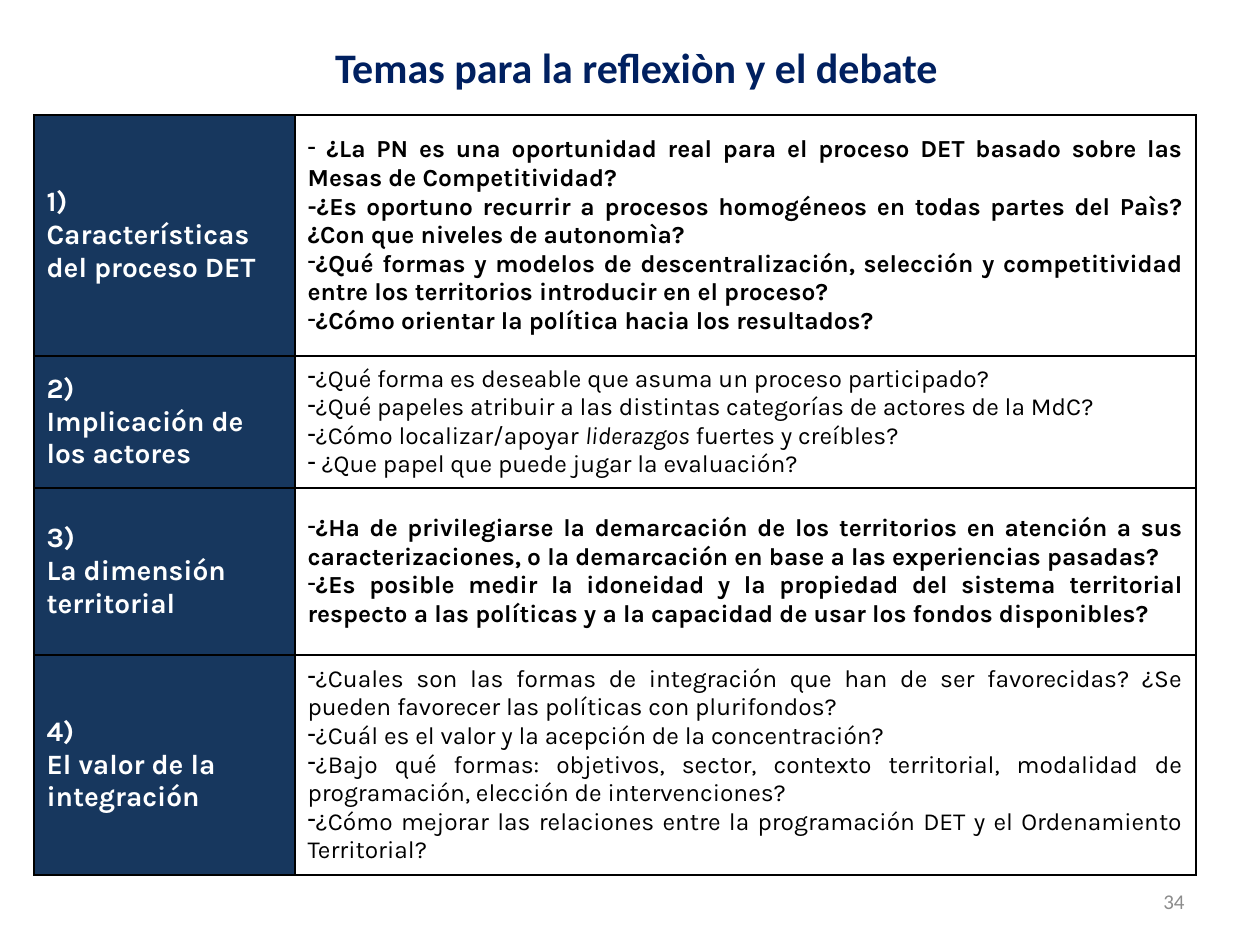
"""Build a slide with a table of discussion topics and questions."""
from dataclasses import dataclass

import pptx
import pptx.dml.color
import pptx.enum.text
import pptx.oxml
import pptx.oxml.ns
import pptx.util

ANCHOR = pptx.enum.text.MSO_ANCHOR
ALIGN = pptx.enum.text.PP_ALIGN


@dataclass(frozen=True)
class TextStyle:
    font: str
    size: int
    color: str
    bold: bool = False


@dataclass(frozen=True)
class Theme:
    title: TextStyle = TextStyle("Calibri", 24, "002060", True)
    topic: TextStyle = TextStyle("Karla", 16, "FFFFFF", True)
    question: TextStyle = TextStyle("Karla", 14, "000000")
    key_question: TextStyle = TextStyle("Karla", 14, "000000", True)
    number: TextStyle = TextStyle("Calibri", 12, "8C8C8C")
    topic_fill: str = "17375E"
    border: str = "000000"


@dataclass(frozen=True)
class Question:
    text: str
    bulleted: bool = True
    emphasis: str = ""


@dataclass(frozen=True)
class Topic:
    name: str
    height: int
    key: bool
    questions: tuple[Question, ...]


THEME = Theme()
COLUMN_WIDTHS = (261, 901)
TOPICS = (
    Topic("Características del proceso DET", 241, True, (
        Question(" ¿La PN es una oportunidad real para el proceso DET basado sobre las Mesas de Competitividad?"),
        Question("-¿Es oportuno recurrir a procesos homogéneos en todas partes del Paìs? "
                 "¿Con que niveles de autonomìa?", bulleted=False),
        Question("¿Qué formas y modelos de descentralización, selección y competitividad "
                 "entre los territorios introducir en el proceso?"),
        Question("¿Cómo orientar la política hacia los resultados?"),
    )),
    Topic("Implicación de los actores", 132, False, (
        Question("¿Qué forma es deseable que asuma un proceso participado?"),
        Question("¿Qué papeles atribuir a las distintas categorías de actores de la MdC?"),
        Question("¿Cómo localizar/apoyar liderazgos fuertes y creíbles?", emphasis="liderazgos"),
        Question(" ¿Que papel que puede jugar la evaluación?"),
    )),
    Topic("La dimensión territorial", 167, True, (
        Question("¿Ha de privilegiarse la demarcación de los territorios en atención a sus "
                 "caracterizaciones, o la demarcación en base a las experiencias pasadas?"),
        Question("¿Es posible medir la idoneidad y la propiedad del sistema territorial "
                 "respecto a las políticas y a la capacidad de usar los fondos disponibles?"),
    )),
    Topic("El valor de la integración", 220, False, (
        Question("¿Cuales son las formas de integración que han de ser favorecidas? "
                 "¿Se pueden favorecer las políticas con plurifondos?"),
        Question("¿Cuál es el valor y la acepción de la concentración?"),
        Question("¿Bajo qué formas: objetivos, sector, contexto territorial, modalidad de "
                 "programación, elección de intervenciones?"),
        Question("¿Cómo mejorar las relaciones entre la programación DET y el Ordenamiento Territorial?"),
    )),
)


def px(length: int) -> pptx.util.Emu:
    return pptx.util.Emu(round(length * 914400 / 126))


def rgb(color: str) -> pptx.dml.color.RGBColor:
    return pptx.dml.color.RGBColor.from_string(color)


def style_paragraph(paragraph, style: TextStyle, alignment: ALIGN) -> None:
    paragraph.alignment = alignment
    font = paragraph.font
    font.name = style.font
    font.size = pptx.util.Pt(style.size)
    font.bold = style.bold
    font.color.rgb = rgb(style.color)


def add_bullet(paragraph) -> None:
    properties = paragraph._p.get_or_add_pPr()
    properties.set("marL", "0")
    properties.set("indent", "0")
    bullet = pptx.oxml.parse_xml(f'<a:buChar {pptx.oxml.ns.nsdecls("a")} char="-"/>')
    properties.insert(0, bullet)


def add_borders(cell) -> None:
    properties = cell._tc.get_or_add_tcPr()
    for index, side in enumerate("LRTB"):
        line = pptx.oxml.parse_xml(
            f'<a:ln{side} {pptx.oxml.ns.nsdecls("a")} w="12700"><a:solidFill>'
            f'<a:srgbClr val="{THEME.border}"/></a:solidFill></a:ln{side}>')
        properties.insert(index, line)


def next_paragraph(text_frame, index: int):
    return text_frame.add_paragraph() if index else text_frame.paragraphs[0]


def fill_topic_cell(cell, number: int, topic: Topic) -> None:
    cell.fill.solid()
    cell.fill.fore_color.rgb = rgb(THEME.topic_fill)
    for index, text in enumerate((f"{number})", topic.name)):
        paragraph = next_paragraph(cell.text_frame, index)
        paragraph.text = text
        style_paragraph(paragraph, THEME.topic, ALIGN.LEFT)


def fill_question_cell(cell, topic: Topic) -> None:
    cell.fill.background()
    style = THEME.key_question if topic.key else THEME.question
    for index, question in enumerate(topic.questions):
        paragraph = next_paragraph(cell.text_frame, index)
        if question.emphasis:
            before, emphasis, after = question.text.partition(question.emphasis)
            for text in (before, emphasis, after):
                run = paragraph.add_run()
                run.text = text
                run.font.italic = text == emphasis
        else:
            paragraph.text = question.text
        style_paragraph(paragraph, style, ALIGN.JUSTIFY)
        if question.bulleted:
            add_bullet(paragraph)


def add_topic_table(slide, left: int, top: int) -> None:
    height = sum(topic.height for topic in TOPICS)
    frame = slide.shapes.add_table(len(TOPICS), len(COLUMN_WIDTHS), px(left), px(top),
                                   px(sum(COLUMN_WIDTHS)), px(height))
    table = frame.table
    table.first_row = False
    table.horz_banding = False
    for column, width in zip(table.columns, COLUMN_WIDTHS):
        column.width = px(width)
    for index, topic in enumerate(TOPICS):
        table.rows[index].height = px(topic.height)
        fill_topic_cell(table.cell(index, 0), index + 1, topic)
        fill_question_cell(table.cell(index, 1), topic)
    for cell in table.iter_cells():
        cell.vertical_anchor = ANCHOR.MIDDLE
        add_borders(cell)


def write_line(shape, text: str, style: TextStyle, alignment: ALIGN) -> None:
    text_frame = shape.text_frame
    text_frame.text = text
    text_frame.word_wrap = True
    text_frame.vertical_anchor = ANCHOR.MIDDLE
    style_paragraph(text_frame.paragraphs[0], style, alignment)


def main() -> None:
    presentation = pptx.Presentation()
    presentation.slide_width, presentation.slide_height = px(1260), px(945)
    slide = presentation.slides.add_slide(presentation.slide_layouts[5])
    title = slide.shapes.title
    title.left, title.top, title.width, title.height = px(203), px(13), px(867), px(107)
    write_line(title, "Temas para la reflexiòn y el debate", THEME.title, ALIGN.CENTER)
    add_topic_table(slide, 34, 115)
    number = slide.shapes.add_textbox(px(903), px(876), px(294), px(50))
    write_line(number, "34", THEME.number, ALIGN.RIGHT)
    presentation.save("out.pptx")


if __name__ == "__main__":
    main()
